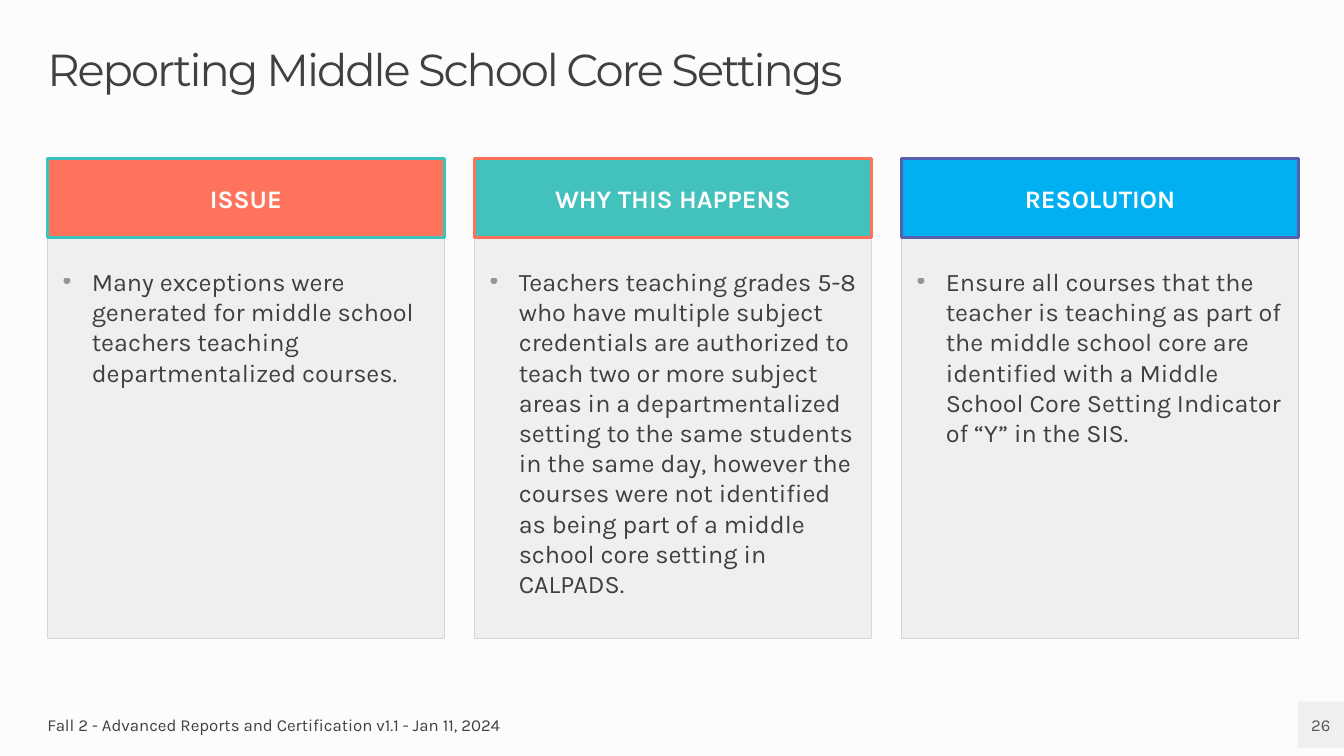
from pptx import Presentation
from pptx.dml.color import RGBColor
from pptx.enum import shapes, text
from pptx.oxml import parse_xml
from pptx.oxml.ns import nsdecls
from pptx.util import Inches, Pt

PAPER = RGBColor(0xFC, 0xFC, 0xFC)
PANEL = RGBColor(0xEF, 0xEF, 0xEF)
PANEL_EDGE = RGBColor(0xD6, 0xD6, 0xD6)
INK = RGBColor(0x40, 0x40, 0x40)
BODY_INK = RGBColor(0x3F, 0x3F, 0x3F)
PAGE_INK = RGBColor(0x59, 0x59, 0x59)
CORAL = RGBColor(0xFF, 0x73, 0x5D)
CORAL_EDGE = RGBColor(0xFF, 0x71, 0x5B)
TEAL = RGBColor(0x42, 0xC1, 0xBD)
TEAL_EDGE = RGBColor(0x3D, 0xC1, 0xBD)
BLUE = RGBColor(0x00, 0xB0, 0xF0)
VIOLET = RGBColor(0x55, 0x5F, 0xAD)

WIDTH, HEIGHT = 13.33, 7.5
MARGIN = 0.47
CONTENT = 12.41
COLUMN = 3.94
HEADER = 0.79
FOOTER = 0.46

COLUMNS = [
    ("ISSUE", CORAL, TEAL_EDGE,
     "Many exceptions were generated for middle school teachers teaching "
     "departmentalized courses."),
    ("WHY THIS HAPPENS", TEAL, CORAL_EDGE,
     "Teachers teaching grades 5-8 who have multiple subject credentials are "
     "authorized to teach two or more subject areas in a departmentalized setting "
     "to the same students in the same day, however the courses were not "
     "identified as being part of a middle school core setting in CALPADS."),
    ("RESOLUTION", BLUE, VIOLET,
     "Ensure all courses that the teacher is teaching as part of the middle school "
     "core are identified with a Middle School Core Setting Indicator of “Y” in "
     "the SIS."),
]


def place(sp, box):
    sp.left, sp.top, sp.width, sp.height = map(Inches, box)


def paint(sp, fill, edge=None, weight=0.75):
    sp.fill.solid()
    sp.fill.fore_color.rgb = fill
    if edge is None:
        sp.line.fill.background()
    else:
        sp.line.color.rgb = edge
        sp.line.width = Pt(weight)


def add_bullet(p):
    pPr = p._p.get_or_add_pPr()
    pPr.set("marL", str(Inches(0.29)))
    pPr.set("indent", str(-Inches(0.29)))
    pPr.append(parse_xml(
        f'<a:buClr {nsdecls("a")}><a:srgbClr val="{INK}">'
        '<a:alpha val="50000"/></a:srgbClr></a:buClr>'))
    pPr.append(parse_xml(f'<a:buFont {nsdecls("a")} typeface="Arial"/>'))
    pPr.append(parse_xml(f'<a:buChar {nsdecls("a")} char="•"/>'))


def write(sp, words, size=18, color=INK, font="Karla", bold=False, bullet=False,
          align=text.PP_ALIGN.LEFT, anchor=text.MSO_ANCHOR.MIDDLE,
          insets=(0, 0, 0, 0), line_spacing=1.0, tracking=None):
    tf = sp.text_frame
    tf.word_wrap = True
    tf.auto_size = text.MSO_AUTO_SIZE.NONE
    tf.vertical_anchor = anchor
    tf.margin_left, tf.margin_top, tf.margin_right, tf.margin_bottom = map(
        Inches, insets)
    p = tf.paragraphs[0]
    if bullet:
        add_bullet(p)
    p.alignment = align
    p.line_spacing = line_spacing
    p.space_before = Pt(0)
    r = p.add_run()
    r.text = words
    r.font.name = font
    r.font.size = Pt(size)
    r.font.bold = bold
    r.font.color.rgb = color
    if tracking is not None:
        r._r.get_or_add_rPr().set("spc", str(int(tracking * 100)))


def add_rect(s, box, fill, edge=None, weight=0.75):
    sp = s.shapes.add_shape(shapes.MSO_SHAPE.RECTANGLE, *map(Inches, box))
    sp.shadow.inherit = False
    paint(sp, fill, edge, weight)
    return sp


def add_title(s, box):
    sp = s.shapes.title
    place(sp, box)
    write(sp, "Reporting Middle School Core Settings", size=32, font="Montserrat",
          anchor=text.MSO_ANCHOR.TOP, line_spacing=0.9, tracking=-1.5)


def add_column(s, panel, box, heading, fill, edge, words):
    left, top, width, height = box
    place(panel, (left, top + HEADER, width, height - HEADER))
    paint(panel, PANEL, PANEL_EDGE)
    write(panel, words, color=BODY_INK, bullet=True, anchor=text.MSO_ANCHOR.TOP,
          insets=(0.15, 0.28, 0.15, 0))
    header = add_rect(s, (left, top, width, HEADER), fill, edge, 2.25)
    write(header, heading, color=PAPER, bold=True, align=text.PP_ALIGN.CENTER,
          insets=(0.12, 0.04, 0.12, 0.04))


def add_columns(s, box):
    left, top, width, height = box
    step = (width - COLUMN) / (len(COLUMNS) - 1)
    panels = [sp for sp in s.placeholders if sp != s.shapes.title]
    for spare in panels[len(COLUMNS):]:
        spare.element.getparent().remove(spare.element)
    for i, (panel, column) in enumerate(zip(panels, COLUMNS)):
        add_column(s, panel, (left + i * step, top, COLUMN, height), *column)


def add_footer(s, box):
    left, top, width, height = box
    note = s.shapes.add_textbox(*map(Inches, (left + MARGIN, top, 5.98, height)))
    write(note, "Fall 2 - Advanced Reports and Certification v1.1 - Jan 11, 2024",
          size=12)
    page = add_rect(s, (left + width - height, top, height, height), PANEL)
    write(page, "26", size=12, color=PAGE_INK, align=text.PP_ALIGN.CENTER)


def main():
    prs = Presentation()
    prs.slide_width, prs.slide_height = Inches(WIDTH), Inches(HEIGHT)
    s = prs.slides.add_slide(prs.slide_layouts.get_by_name("Comparison"))
    s.background.fill.solid()
    s.background.fill.fore_color.rgb = PAPER
    add_title(s, (MARGIN, 0.47, CONTENT, 0.47))
    add_columns(s, (MARGIN, 1.57, CONTENT, 4.76))
    add_footer(s, (0, 6.96, WIDTH, FOOTER))
    prs.save("out.pptx")


if __name__ == "__main__":
    main()
